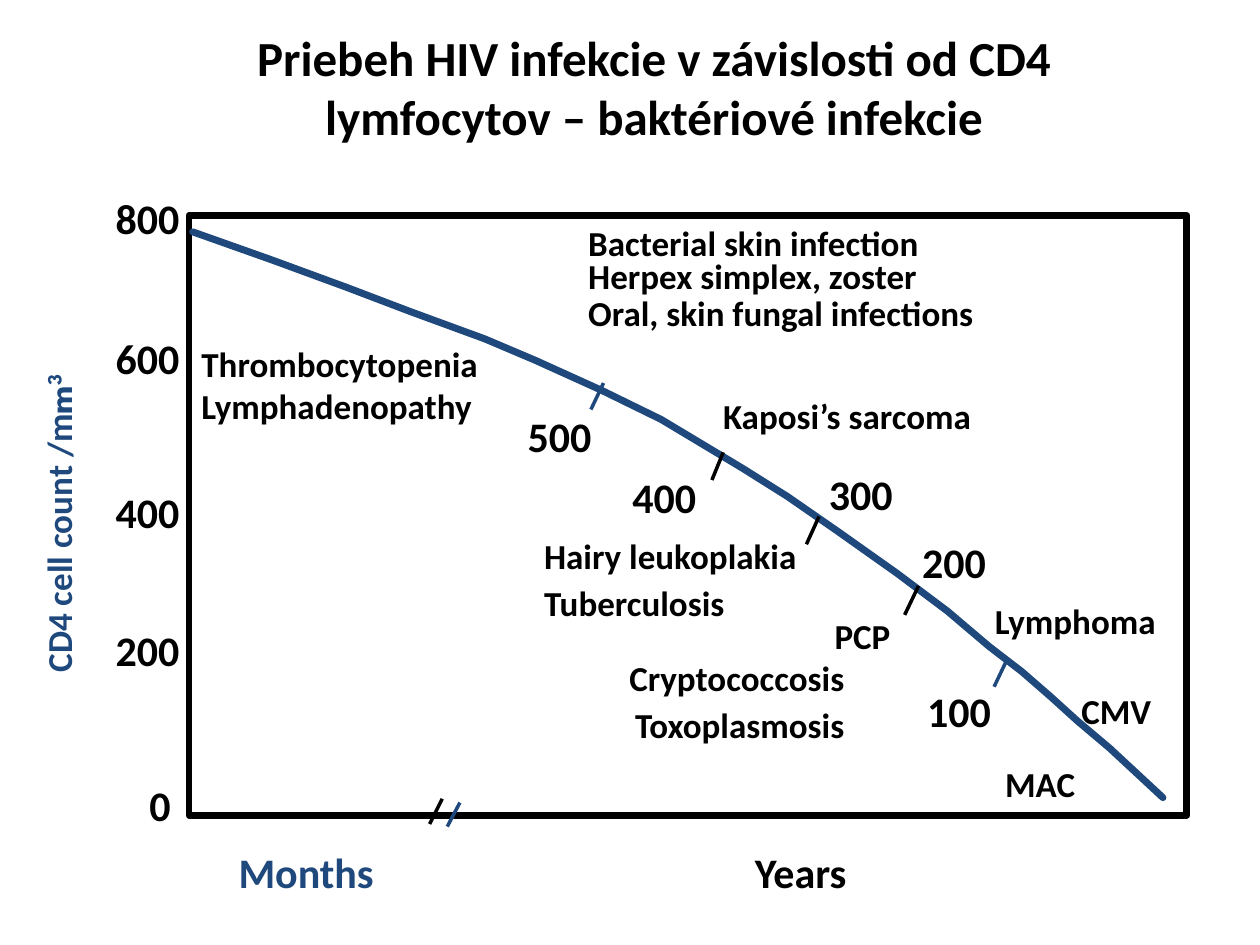
from lxml import etree
from pptx import Presentation
from pptx.dml.color import RGBColor
from pptx.enum.shapes import MSO_CONNECTOR, MSO_SHAPE
from pptx.enum.text import MSO_ANCHOR, MSO_AUTO_SIZE, PP_ALIGN
from pptx.oxml.ns import qn
from pptx.util import Inches, Pt

COLORS = {"black": "000000", "blue": "1F497D"}
LEFT, CENTER, RIGHT = PP_ALIGN.LEFT, PP_ALIGN.CENTER, PP_ALIGN.RIGHT

presentation = Presentation()
presentation.slide_width = Inches(10)
presentation.slide_height = Inches(7.5)
slide = presentation.slides.add_slide(presentation.slide_layouts[5])


def format_text(shape, size, color="black", alignment=LEFT):
    shape.text_frame.word_wrap = True
    for paragraph in shape.text_frame.paragraphs:
        paragraph.alignment = alignment
        for run in paragraph.runs:
            run.font.name = "Calibri"
            run.font.size = Pt(size)
            run.font.bold = True
            run.font.color.rgb = RGBColor.from_string(COLORS[color])


def add_label(text, left, top, width, height, size=20, color="black", alignment=LEFT):
    shape = slide.shapes.add_textbox(Inches(left), Inches(top), Inches(width), Inches(height))
    shape.text_frame.text = text
    format_text(shape, size, color, alignment)
    return shape


# Title
title = slide.shapes.title
title.left, title.top = Inches(1.41), Inches(0.17)
title.width, title.height = Inches(7.56), Inches(1.03)
title.text_frame.text = "Priebeh HIV infekcie v závislosti od CD4 lymfocytov – baktériové infekcie"
title.text_frame.auto_size = MSO_AUTO_SIZE.NONE
title.text_frame.vertical_anchor = MSO_ANCHOR.MIDDLE
format_text(title, 28, alignment=CENTER)

# Plot frame
frame = slide.shapes.add_shape(
    MSO_SHAPE.RECTANGLE, Inches(1.5), Inches(1.71), Inches(7.92), Inches(4.76))
frame.shadow.inherit = False
frame.fill.background()
frame.line.color.rgb = RGBColor.from_string(COLORS["black"])
frame.line.width = Pt(4)

# Vertical axis values and horizontal axis names
for text, top in [("800", 1.48), ("600", 2.59), ("400", 3.81), ("200", 4.91)]:
    add_label(text, 0.82, top, 0.8, 0.5, 24)
add_label("0", 0.87, 6.14, 0.8, 0.5, 24, alignment=CENTER)
add_label("Months", 1.61, 6.67, 1.64, 0.5, 24, "blue", CENTER)
add_label("Years", 5.67, 6.67, 1.37, 0.5, 24, alignment=CENTER)

# Vertical axis name, with a raised 3
axis_name = add_label("CD4 cell count /m", -0.94, 3.82, 2.8, 0.43)
axis_name.rotation = 270
unit_paragraph = axis_name.text_frame.paragraphs[0]
for text in ("m", "3"):
    unit_paragraph.add_run().text = text
format_text(axis_name, 20, "blue")
for run in unit_paragraph.runs[1:]:
    run.font.name = "League Spartan"
unit_paragraph.runs[-1].font._element.set("baseline", "30000")

# CD4 curve
curve_points = [
    (1.53, 1.84), (2.15, 2.06), (2.75, 2.28), (3.25, 2.47), (3.85, 2.69),
    (4.25, 2.86), (4.78, 3.1), (5.25, 3.33), (5.9, 3.72), (6.25, 3.94),
    (6.64, 4.21), (7.12, 4.55), (7.52, 4.85), (7.85, 5.13), (8.11, 5.33),
    (8.34, 5.53), (8.55, 5.72), (8.81, 5.94), (9.23, 6.33),
]
points = [(Inches(x), Inches(y)) for x, y in curve_points]
builder = slide.shapes.build_freeform(*points[0])
builder.add_line_segments(points[1:], close=False)
curve = builder.convert_to_shape()
curve.shadow.inherit = False
curve.fill.background()
curve.line.color.rgb = RGBColor.from_string(COLORS["blue"])
curve.line.width = Pt(4)
curve.line._get_or_add_ln().set("cap", "rnd")

# Tick marks on the curve and the break in the time axis
ticks = [
    (4.79, 3.04, 4.69, 3.25, "blue"),
    (5.74, 3.59, 5.65, 3.81, "black"),
    (6.5, 4.1, 6.4, 4.32, "black"),
    (7.29, 4.65, 7.18, 4.88, "black"),
    (7.99, 5.24, 7.89, 5.45, "blue"),
    (3.51, 6.34, 3.41, 6.54, "black"),
    (3.65, 6.37, 3.55, 6.56, "blue"),
]
for *ends, color in ticks:
    tick = slide.shapes.add_connector(MSO_CONNECTOR.STRAIGHT, *map(Inches, ends))
    tick.line.color.rgb = RGBColor.from_string(COLORS[color])
    tick.line.width = Pt(2)
    etree.SubElement(tick._element.spPr, qn("a:effectLst"))

# Cell counts beside the ticks
for text, left, top in [("500", 4.09, 3.21), ("400", 4.92, 3.69), ("300", 6.48, 3.67),
                        ("200", 7.22, 4.21), ("100", 7.26, 5.39)]:
    add_label(text, left, top, 0.9, 0.5, 24)

# Single diseases
add_label("Thrombocytopenia Lymphadenopathy", 1.5, 2.67, 2.99, 0.77)
add_label("Kaposi’s sarcoma", 5.64, 3.08, 2.77, 0.43)
for text, left, top, width in [("PCP", 6.42, 4.83, 0.85), ("Lymphoma", 7.65, 4.71, 1.77),
                               ("CMV", 8.36, 5.42, 1), ("MAC", 7.83, 6, 0.85)]:
    add_label(text, left, top, width, 0.43, alignment=CENTER)

# Disease groups, with the line pitch of each following line in points
groups = [
    ("Bacterial skin infection\nHerpex simplex, zoster\nOral, skin fungal infections",
     4.57, 1.71, 4.65, 1, LEFT, [19, 21]),
    ("Hairy leukoplakia\nTuberculosis", 4.22, 4.19, 2.98, 0.8, LEFT, [27]),
    ("Cryptococcosis\nToxoplasmosis", 4.5, 5.16, 2.3, 0.8, RIGHT, [27]),
]
for text, left, top, width, height, alignment, pitches in groups:
    group = add_label(text, left, top, width, height, alignment=alignment)
    for paragraph, pitch in zip(group.text_frame.paragraphs[1:], pitches):
        paragraph.line_spacing = Pt(pitch)

presentation.save("out.pptx")
